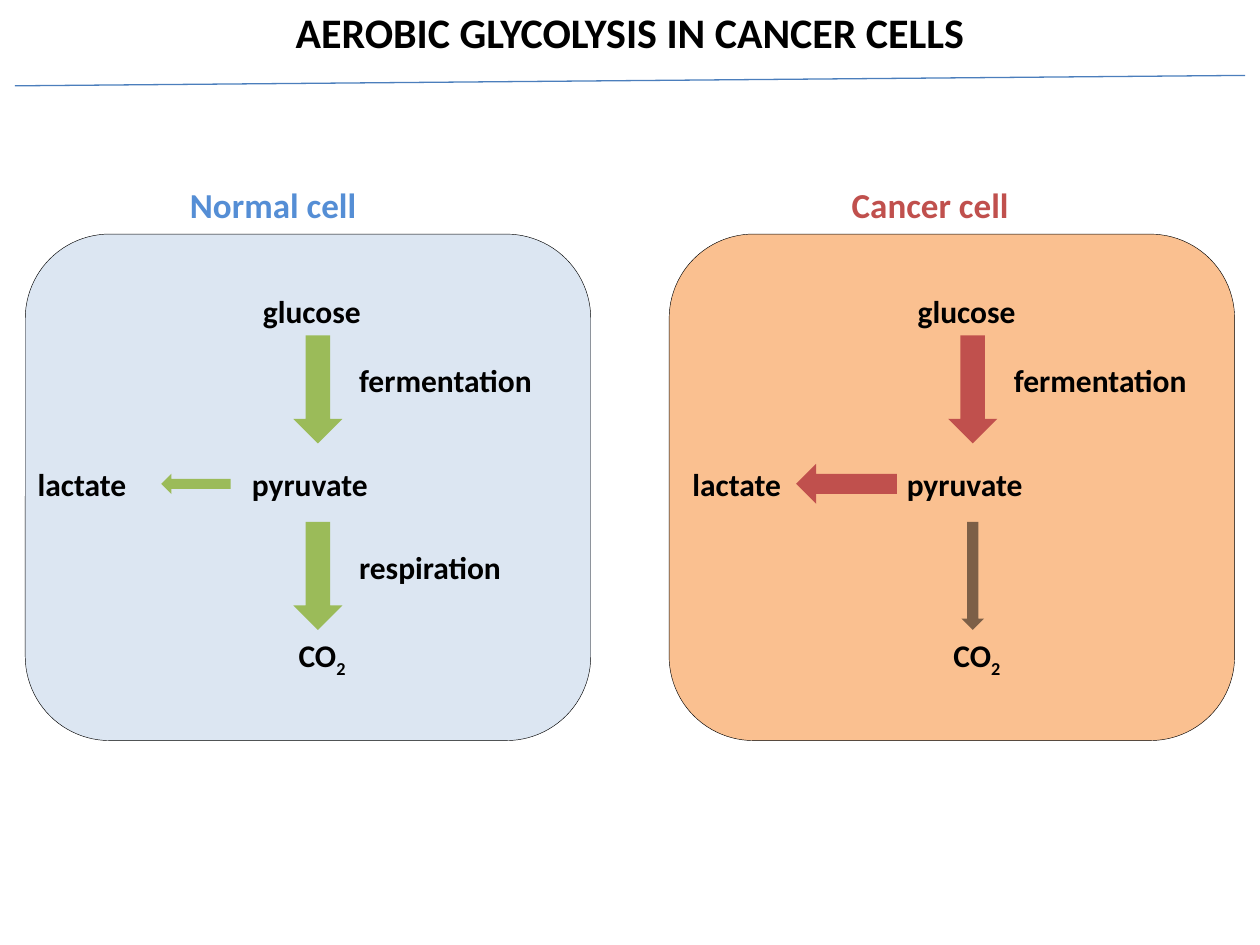
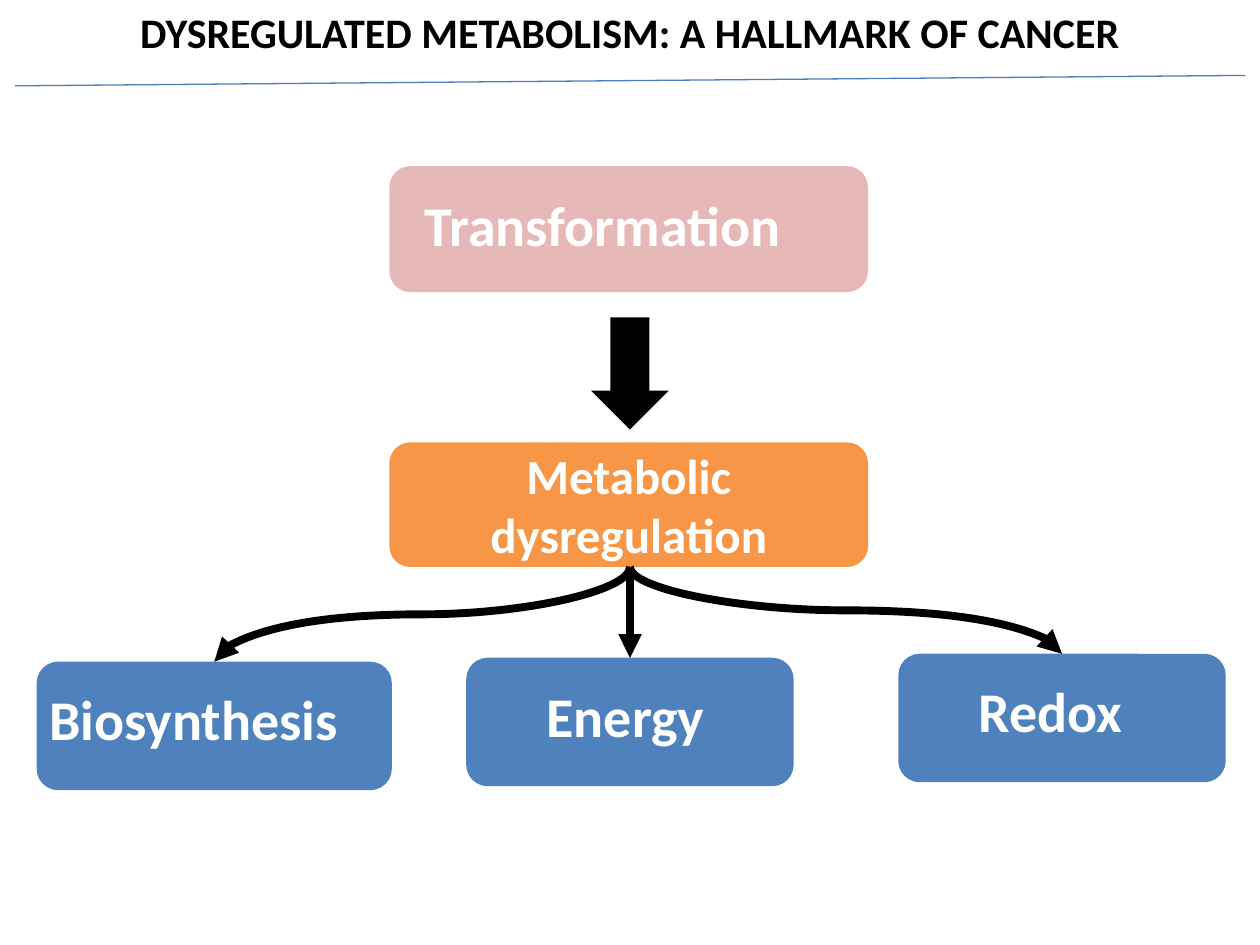
from dataclasses import dataclass

from lxml.etree import SubElement
from pptx import Presentation
from pptx.dml.color import RGBColor
from pptx.enum.shapes import MSO_CONNECTOR, MSO_SHAPE
from pptx.enum.text import MSO_ANCHOR, MSO_AUTO_SIZE, PP_ALIGN
from pptx.oxml.ns import qn
from pptx.util import Cm, Pt


@dataclass(frozen=True)
class Theme:
    font: str = "Calibri"
    black: str = "000000"
    white: str = "FFFFFF"
    rule: str = "4B7EBC"
    green: str = "9BBB59"
    red: str = "C0504D"
    heading_blue: str = "558ED5"
    pale_blue: str = "DCE6F2"
    peach: str = "FAC090"
    pink: str = "E6B9B8"
    orange: str = "F79646"
    blue: str = "4F81BD"
    title_size: int = 24
    heading_size: int = 20
    label_size: int = 18
    box_size: int = 32
    wrapped_size: int = 28


T = Theme()


@dataclass(frozen=True)
class Area:
    """A rectangle in centimetres."""
    x: float
    y: float
    w: float
    h: float

    def emu(self) -> tuple:
        return Cm(self.x), Cm(self.y), Cm(self.w), Cm(self.h)


@dataclass(frozen=True)
class Label:
    text: str
    x: float
    y: float
    w: float
    subscript: str = ""


@dataclass(frozen=True)
class Cell:
    heading: Label
    heading_color: str
    body_x: float
    body_color: str
    shift: float  # offset of the pathway from its place in the normal cell
    arrow_color: str
    lactate_arrow: Area
    respiration_width: float
    respiration_color: str
    respiration_alpha: int
    extra_labels: tuple = ()


@dataclass(frozen=True)
class Box:
    area: Area
    color: str
    label: Label


PATHWAY = (
    Label("glucose", 5.05, 5.77, 2.72),
    Label("pyruvate", 4.83, 9.25, 3.18),
    Label("CO", 5.77, 12.7, 1.57, subscript="2"),
    Label("fermentation", 6.99, 7.16, 4.29),
    Label("lactate", 0.51, 9.25, 2.54),
)
CELLS = (
    Cell(Label("Normal cell", 3.58, 3.58, 4.37), T.heading_blue, 0.51, T.pale_blue,
         0, T.green, Area(3.25, 9.55, 1.4, 0.41), 0.99, T.green, 100,
         (Label("respiration", 6.99, 10.92, 3.66),)),
    Cell(Label("Cancer cell", 16.92, 3.57, 4.11), T.red, 13.49, T.peach,
         13.2, T.red, Area(16.05, 9.35, 2.03, 0.81), 0.46, T.black, 50),
)
CENTRE = 12.7
TRANSFORMATION = Box(Area(7.85, 3.35, 9.65, 2.54), T.pink,
                     Label("Transformation", 8.31, 3.71, 8.76))
DYSREGULATION = Area(7.85, 8.92, 9.65, 2.51)
OUTCOMES = (
    Box(Area(0.74, 13.34, 7.16, 2.59), T.blue, Label("Biosynthesis", 0.74, 13.67, 7.16)),
    Box(Area(9.4, 13.26, 6.6, 2.59), T.blue, Label("Energy", 10.77, 13.61, 4.19)),
    Box(Area(18.11, 13.18, 6.6, 2.59), T.blue, Label("Redox", 19.48, 13.51, 3.86)),
)


def add_run(p, text: str, size: int, color: str):
    r = p.add_run()
    r.text = text
    r.font.name = T.font
    r.font.size = Pt(size)
    r.font.bold = True
    r.font.color.rgb = RGBColor.from_string(color)
    return r


def add_label(s, label: Label, size: int, color: str, shift: float = 0) -> None:
    area = Area(label.x + shift, label.y, label.w, size * 0.05 + 0.1)
    tf = s.shapes.add_textbox(*area.emu()).text_frame
    tf.word_wrap = False
    tf.auto_size = MSO_AUTO_SIZE.SHAPE_TO_FIT_TEXT
    p = tf.paragraphs[0]
    add_run(p, label.text, size, color)
    if label.subscript:
        r = add_run(p, label.subscript, size, color)
        r.font._element.set("baseline", "-25000")


def add_block(s, kind: MSO_SHAPE, area: Area, color: str,
              outlined: bool = False, alpha: int = 100):
    sp = s.shapes.add_shape(kind, *area.emu())
    sp.shadow.inherit = False
    sp.fill.solid()
    sp.fill.fore_color.rgb = RGBColor.from_string(color)
    if alpha < 100:
        rgb = next(sp.element.spPr.iter(qn("a:srgbClr")))
        SubElement(rgb, qn("a:alpha")).set("val", str(alpha * 1000))
    if outlined:
        sp.line.color.rgb = RGBColor.from_string(T.black)
        sp.line.width = Pt(0.25)
    else:
        sp.line.fill.background()
    return sp


def add_down_arrow(s, centre: float, y: float, w: float, h: float,
                   color: str, alpha: int = 100) -> None:
    add_block(s, MSO_SHAPE.DOWN_ARROW, Area(centre - w / 2, y, w, h), color, alpha=alpha)


def add_line(s, kind: MSO_CONNECTOR, ends: tuple, color: str, width: float):
    line = s.shapes.add_connector(kind, *(Cm(v) for v in ends))
    line.line.color.rgb = RGBColor.from_string(color)
    line.line.width = Pt(width)
    SubElement(line.element.spPr, qn("a:effectLst"))
    return line


def add_branch(s, x1: float, y1: float, x2: float, y2: float) -> None:
    """Draw an arrow that leaves and arrives vertically, curved if x changes."""
    dx, dy = x2 - x1, y2 - y1
    if abs(dx) < 0.01:
        line = add_line(s, MSO_CONNECTOR.STRAIGHT, (x1, y1, x2, y2), T.black, 4.5)
    else:
        # The curve runs sideways by default: lay it out turned, then rotate it.
        cx, cy = (x1 + x2) / 2, (y1 + y2) / 2
        half_w = dy / 2 if dx > 0 else -dy / 2
        half_h = abs(dx) / 2
        ends = (cx + half_w, cy - half_h, cx - half_w, cy + half_h)
        line = add_line(s, MSO_CONNECTOR.CURVE, ends, T.black, 4.5)
        degrees = 270 if dx > 0 else 90
        line.element.spPr.xfrm.set("rot", str(degrees * 60000))
    ln = line.element.spPr.find(qn("a:ln"))
    SubElement(ln, qn("a:tailEnd")).set("type", "triangle")


def add_title_slide(prs, title: str):
    s = prs.slides.add_slide(prs.slide_layouts[5])
    sp = s.shapes.title
    sp.left, sp.top, sp.width, sp.height = Area(0, 0, 25.4, 3.18).emu()
    tf = sp.text_frame
    tf.auto_size = MSO_AUTO_SIZE.NONE
    tf.vertical_anchor = MSO_ANCHOR.TOP
    p = tf.paragraphs[0]
    p.alignment = PP_ALIGN.CENTER
    add_run(p, title, T.title_size, T.black)
    return s


def move_rule_to_master(prs, s) -> None:
    rule = add_line(s, MSO_CONNECTOR.STRAIGHT, (0.3, 1.73, 25.1, 1.52), T.rule, 0.75)
    rule.element.nvCxnSpPr.cNvPr.set("id", "100")
    prs.slide_master.shapes.element.append(rule.element)


def draw_cell(s, cell: Cell) -> None:
    add_block(s, MSO_SHAPE.ROUNDED_RECTANGLE, Area(cell.body_x, 4.72, 11.4, 10.21),
              cell.body_color, outlined=True)
    add_label(s, cell.heading, T.heading_size, cell.heading_color)
    centre = 6.41 + cell.shift
    add_down_arrow(s, centre, 6.76, 0.99, 2.18, cell.arrow_color)
    add_down_arrow(s, centre, 10.52, cell.respiration_width, 2.18,
                   cell.respiration_color, cell.respiration_alpha)
    add_block(s, MSO_SHAPE.LEFT_ARROW, cell.lactate_arrow, cell.arrow_color)
    for label in PATHWAY + cell.extra_labels:
        add_label(s, label, T.label_size, T.black, cell.shift)


def draw_box(s, box: Box) -> None:
    add_block(s, MSO_SHAPE.ROUNDED_RECTANGLE, box.area, box.color)
    add_label(s, box.label, T.box_size, T.white)


def build_glycolysis(prs) -> None:
    s = add_title_slide(prs, "AEROBIC GLYCOLYSIS IN CANCER CELLS")
    move_rule_to_master(prs, s)
    for cell in CELLS:
        draw_cell(s, cell)


def build_metabolism(prs) -> None:
    s = add_title_slide(prs, "DYSREGULATED METABOLISM: A HALLMARK OF CANCER")
    draw_box(s, TRANSFORMATION)
    add_down_arrow(s, CENTRE, 6.4, 1.57, 2.26, T.black)
    sp = add_block(s, MSO_SHAPE.ROUNDED_RECTANGLE, DYSREGULATION, T.orange)
    tf = sp.text_frame
    tf.word_wrap = True
    tf.vertical_anchor = MSO_ANCHOR.MIDDLE
    p = tf.paragraphs[0]
    p.alignment = PP_ALIGN.CENTER
    add_run(p, "Metabolic dysregulation", T.wrapped_size, T.white)
    for box in OUTCOMES:
        draw_box(s, box)
        add_branch(s, CENTRE, DYSREGULATION.y + DYSREGULATION.h,
                   box.area.x + box.area.w / 2, box.area.y)


def main() -> None:
    prs = Presentation()
    prs.slide_width, prs.slide_height = Cm(25.4), Cm(19.05)
    build_glycolysis(prs)
    build_metabolism(prs)
    prs.save("out.pptx")


if __name__ == "__main__":
    main()
